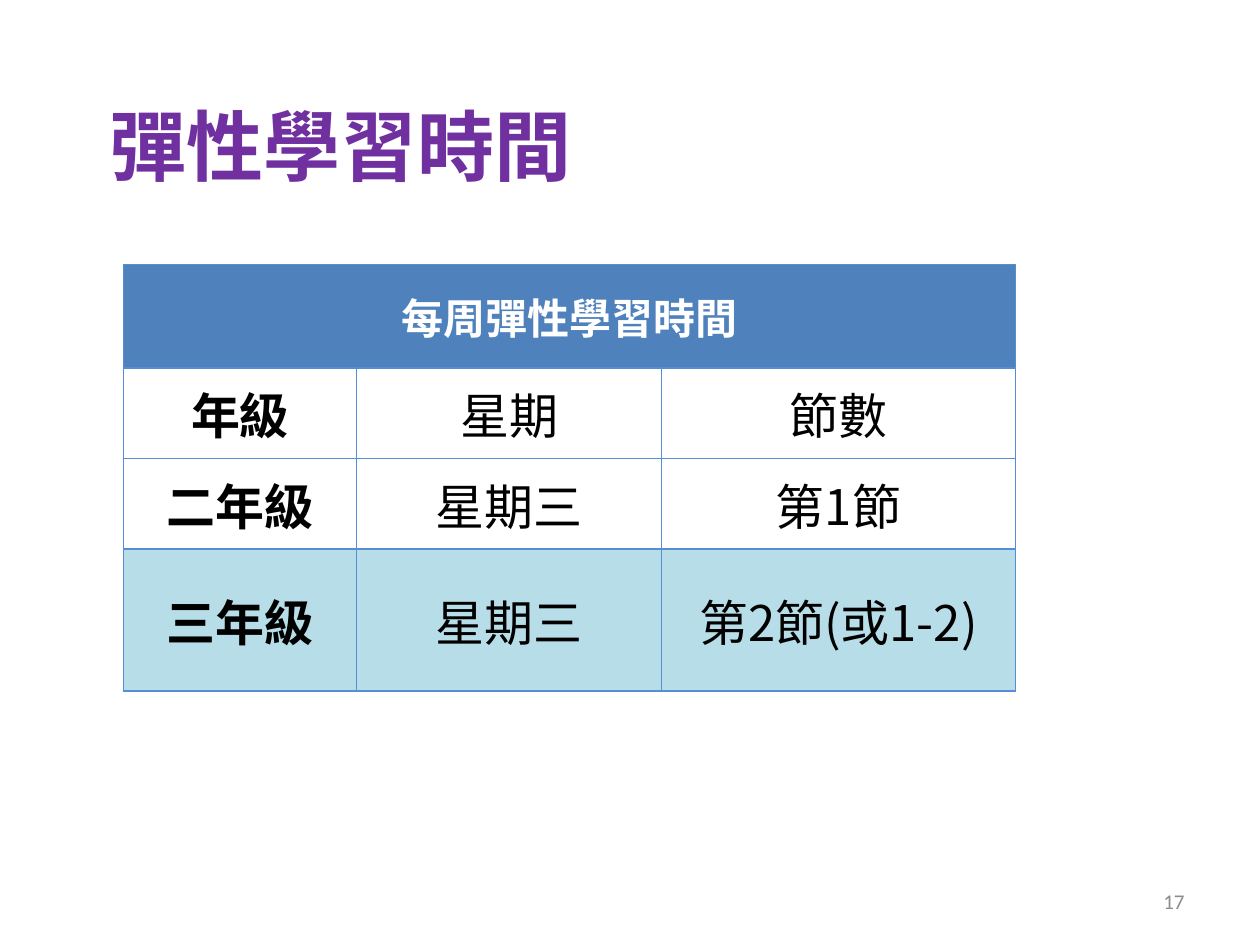
import pptx
import pptx.dml.color
import pptx.enum.text
import pptx.oxml
import pptx.oxml.ns
import pptx.util
from dataclasses import dataclass
from pptx.dml.color import RGBColor
from pptx.util import Inches

PURPLE = RGBColor(0x70, 0x30, 0xA0)
HEADER_BLUE = RGBColor(0x4F, 0x81, 0xBD)
BORDER_BLUE = RGBColor(0x55, 0x8E, 0xD5)
LIGHT_BLUE = RGBColor(0xB7, 0xDE, 0xE8)
GRAY = RGBColor(0x8C, 0x8C, 0x8C)
WHITE = RGBColor(0xFF, 0xFF, 0xFF)
BLACK = RGBColor(0, 0, 0)
CHINESE_FONT = "Noto Sans CJK SC"
ALIGN = pptx.enum.text.PP_ALIGN
MIDDLE = pptx.enum.text.MSO_ANCHOR.MIDDLE


@dataclass
class TextStyle:
    size: int
    color: RGBColor
    bold: bool = False
    font: str = CHINESE_FONT


@dataclass
class GradeRow:
    texts: tuple[str, str, str]
    fill: RGBColor = WHITE


GRADE_ROWS = [
    GradeRow(("年級", "星期", "節數")),
    GradeRow(("二年級", "星期三", "第1節")),
    GradeRow(("三年級", "星期三", "第2節(或1-2)"), LIGHT_BLUE),
]
COLUMN_WIDTHS = (1.85, 2.42, 2.81)
HEADER_HEIGHT, ROW_HEIGHT = 0.82, 0.72


def write_text(frame, text: str, style: TextStyle, alignment) -> None:
    frame.word_wrap = True
    frame.vertical_anchor = MIDDLE
    paragraph = frame.paragraphs[0]
    paragraph.alignment = alignment
    run = paragraph.add_run()
    run.text = text
    run.font.name = style.font
    run.font.size = pptx.util.Pt(style.size)
    run.font.bold = style.bold
    run.font.color.rgb = style.color
    # East Asian characters take their own typeface
    east_asian = pptx.oxml.parse_xml(
        f'<a:ea {pptx.oxml.ns.nsdecls("a")} typeface="{style.font}"/>')
    run.font._element.find(pptx.oxml.ns.qn("a:latin")).addnext(east_asian)


def format_cell(cell, fill: RGBColor) -> None:
    cell.vertical_anchor = MIDDLE
    cell.margin_left = cell.margin_right = Inches(0.07)
    cell.margin_top = cell.margin_bottom = 0
    cell.fill.solid()
    cell.fill.fore_color.rgb = fill
    properties = cell._tc.get_or_add_tcPr()
    for index, side in enumerate(("lnL", "lnR", "lnT", "lnB")):
        border = pptx.oxml.parse_xml(
            f'<a:{side} {pptx.oxml.ns.nsdecls("a")} w="12700"><a:solidFill>'
            f'<a:srgbClr val="{BORDER_BLUE}"/></a:solidFill></a:{side}>')
        properties.insert(index, border)


def add_schedule(slide) -> None:
    table = slide.shapes.add_table(
        len(GRADE_ROWS) + 1, len(COLUMN_WIDTHS), Inches(0.98), Inches(2.1),
        Inches(sum(COLUMN_WIDTHS)),
        Inches(HEADER_HEIGHT + ROW_HEIGHT * len(GRADE_ROWS))).table
    for column, width in zip(table.columns, COLUMN_WIDTHS):
        column.width = Inches(width)
    for index, row in enumerate(table.rows):
        row.height = Inches(ROW_HEIGHT if index else HEADER_HEIGHT)

    # Heading across all columns
    for column_index in range(len(COLUMN_WIDTHS)):
        format_cell(table.cell(0, column_index), HEADER_BLUE)
    heading = table.cell(0, 0)
    heading.merge(table.cell(0, len(COLUMN_WIDTHS) - 1))
    write_text(heading.text_frame, "每周彈性學習時間",
               TextStyle(24, WHITE, True), ALIGN.CENTER)

    # Grades, with a bold first column
    for row_index, grade in enumerate(GRADE_ROWS, start=1):
        for column_index, text in enumerate(grade.texts):
            cell = table.cell(row_index, column_index)
            format_cell(cell, grade.fill)
            write_text(cell.text_frame, text,
                       TextStyle(28, BLACK, column_index == 0), ALIGN.CENTER)


def main() -> None:
    presentation = pptx.Presentation()
    presentation.slide_width = Inches(10)
    presentation.slide_height = Inches(7.5)
    slide = presentation.slides.add_slide(presentation.slide_layouts[5])

    # Title
    title = slide.shapes.title
    title.left, title.top = Inches(0.5), Inches(0.52)
    title.width, title.height = Inches(9), Inches(1.25)
    title.text_frame.margin_left = Inches(0.37)
    write_text(title.text_frame, "彈性學習時間",
               TextStyle(44, PURPLE, True), ALIGN.LEFT)

    add_schedule(slide)

    # Page number
    page_number = slide.shapes.add_textbox(
        Inches(7.17), Inches(6.95), Inches(2.33), Inches(0.4))
    write_text(page_number.text_frame, "17",
               TextStyle(12, GRAY, font="Calibri"), ALIGN.RIGHT)

    presentation.save("out.pptx")


if __name__ == "__main__":
    main()
